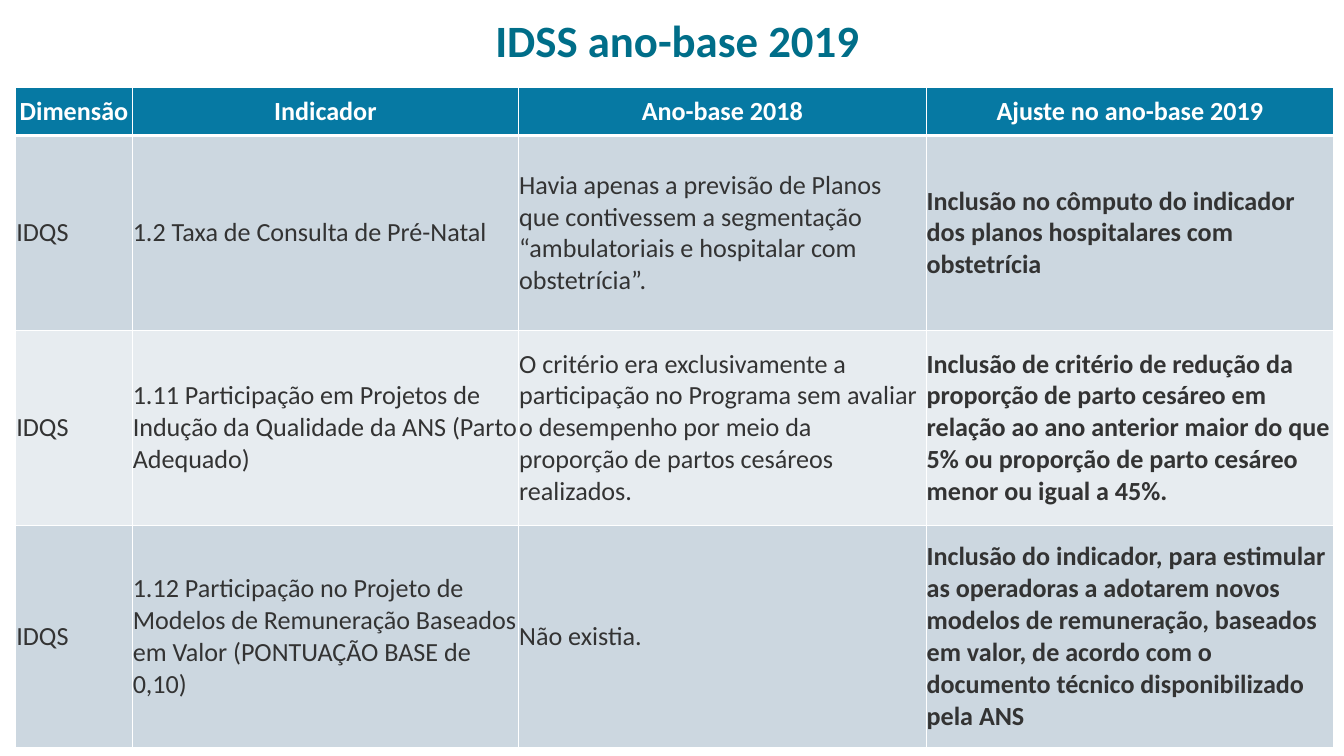
from dataclasses import dataclass

from lxml.etree import SubElement
from pptx import Presentation
from pptx.dml.color import RGBColor
from pptx.enum.text import MSO_ANCHOR as Anchor, PP_ALIGN as Align
from pptx.oxml.ns import qn
from pptx.util import Pt


@dataclass(frozen=True)
class Theme:
    font: str = "Calibri"
    title: str = "006E89"
    header: str = "0679A3"
    bands: tuple = ("CCD7E0", "E7ECF0")
    body: str = "333333"
    white: str = "FFFFFF"
    title_size: int = 48
    table_size: int = 28


theme = Theme()


def style_text(paragraph, size, color, bold, align):
    paragraph.alignment = align
    font = paragraph.font
    font.name = theme.font
    font.size = Pt(size)
    font.bold = bold
    font.color.rgb = RGBColor.from_string(color)


def add_border(cell, side, width):
    line = SubElement(cell._tc.get_or_add_tcPr(), qn(f"a:ln{side}"), w=str(Pt(width)))
    fill = SubElement(line, qn("a:solidFill"))
    SubElement(fill, qn("a:srgbClr"), val=theme.white)


presentation = Presentation()
presentation.slide_width = Pt(1440)
presentation.slide_height = Pt(810)
slide = presentation.slides.add_slide(presentation.slide_layouts[6])

title = slide.shapes.add_textbox(Pt(77.8), Pt(9.4), Pt(1296), Pt(67))
title_frame = title.text_frame
title_frame.word_wrap = True
title_frame.vertical_anchor = Anchor.MIDDLE
title_frame.text = "IDSS ano-base 2019"
style_text(title_frame.paragraphs[0], theme.title_size, theme.title, True, Align.CENTER)

rows = [
    ("Dimensão", "Indicador", "Ano-base 2018", "Ajuste no ano-base 2019"),
    (
        "IDQS",
        "1.2 Taxa de Consulta de Pré-Natal",
        "Havia apenas a previsão de Planos que contivessem a segmentação “ambulatoriais e hospitalar com obstetrícia”.",
        "Inclusão no cômputo do indicador dos planos hospitalares com obstetrícia",
    ),
    (
        "IDQS",
        "1.11 Participação em Projetos de Indução da Qualidade da ANS (Parto Adequado)",
        "O critério era exclusivamente a participação no Programa sem avaliar o desempenho por meio da proporção de partos cesáreos realizados.",
        "Inclusão de critério de redução da proporção de parto cesáreo em relação ao ano anterior maior do que 5% ou proporção de parto cesáreo menor ou igual a 45%.",
    ),
    (
        "IDQS",
        "1.12 Participação no Projeto de Modelos de Remuneração Baseados em Valor (PONTUAÇÃO BASE de 0,10)",
        "Não existia.",
        "Inclusão do indicador, para estimular as operadoras a adotarem novos modelos de remuneração, baseados em valor, de acordo com o documento técnico disponibilizado pela ANS",
    ),
]
column_widths = [124.8, 414, 436.6, 436.6]
row_heights = [51.8, 208.8, 208.8, 238.4]

table = slide.shapes.add_table(
    len(rows), len(column_widths), Pt(16.8), Pt(93.2), Pt(sum(column_widths)), Pt(sum(row_heights))
).table
for column, width in zip(table.columns, column_widths):
    column.width = Pt(width)

for row_index, (texts, height) in enumerate(zip(rows, row_heights)):
    table.rows[row_index].height = Pt(height)
    is_header = row_index == 0
    fill_color = theme.header if is_header else theme.bands[(row_index - 1) % 2]
    text_color = theme.white if is_header else theme.body
    align = Align.CENTER if is_header else Align.LEFT
    border_widths = {"L": 1, "R": 1, "T": 3 if row_index == 1 else 1, "B": 3 if is_header else 1}
    for column_index, text in enumerate(texts):
        cell = table.cell(row_index, column_index)
        cell.text = text
        cell.vertical_anchor = Anchor.MIDDLE
        cell.margin_left = cell.margin_right = cell.margin_top = Pt(0.7)
        cell.margin_bottom = Pt(0)
        for side, width in border_widths.items():
            add_border(cell, side, width)
        cell.fill.solid()
        cell.fill.fore_color.rgb = RGBColor.from_string(fill_color)
        bold = is_header or column_index == len(texts) - 1
        style_text(cell.text_frame.paragraphs[0], theme.table_size, text_color, bold, align)

presentation.save("out.pptx")
